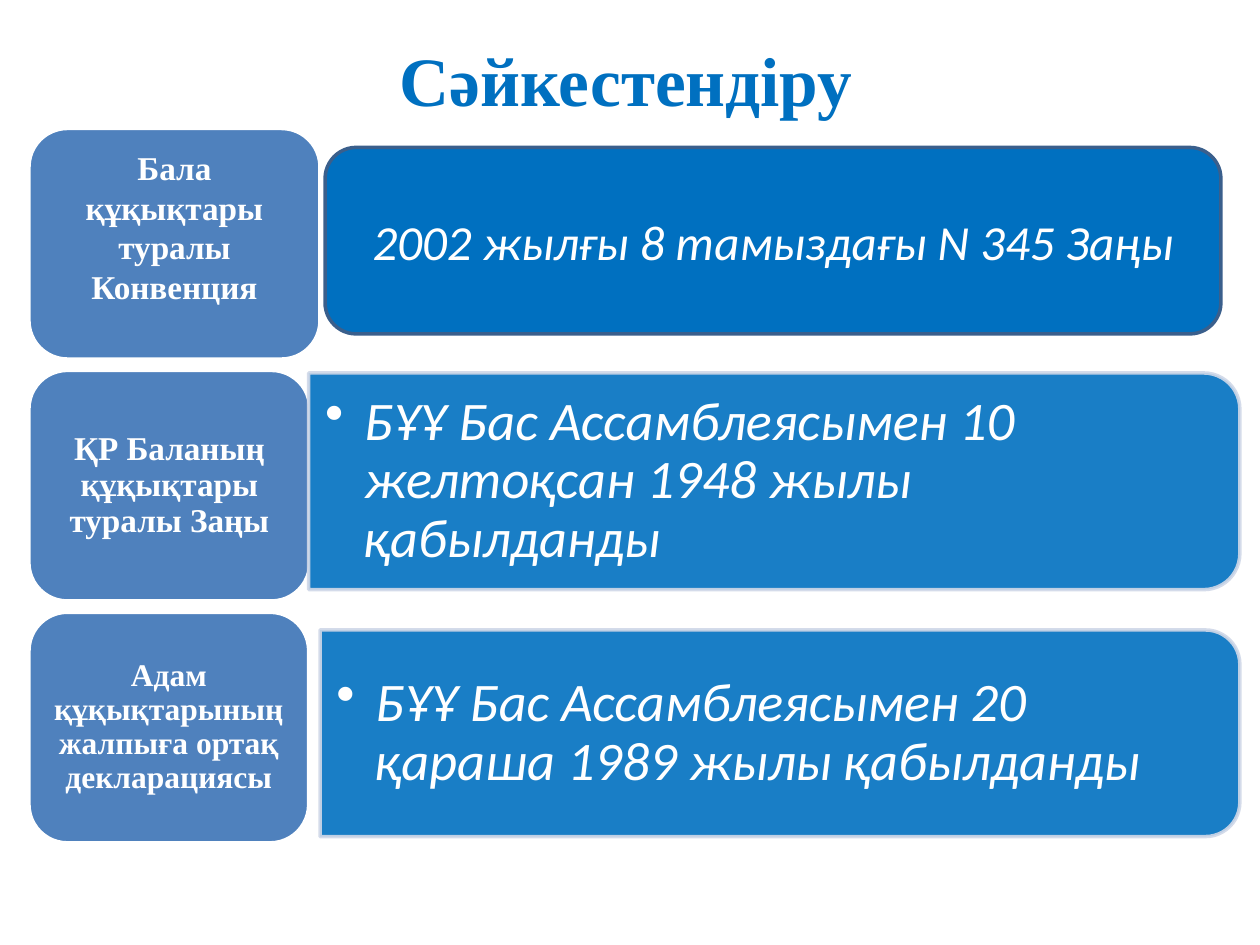
from lxml.etree import SubElement
from pptx import Presentation
from pptx.dml.color import RGBColor
from pptx.enum.shapes import MSO_SHAPE
from pptx.enum.text import MSO_ANCHOR, PP_ALIGN
from pptx.oxml.ns import qn
from pptx.util import Inches, Pt

TITLE = "Сәйкестендіру"
SERIF, SANS = "Times New Roman", "Calibri"
BLUE, STEEL, WHITE = "0070C0", "4F81BD", "FFFFFF"
LABEL_LEFT, LABEL_TOP, LABEL_HEIGHT, LABEL_PITCH = 0.23, 1.02, 1.83, 1.92
LABELS = [
    {"text": "Бала құқықтары туралы Конвенция", "width": 2.31, "size": 19,
     "spacing": 1.0, "bottom": 0.4},
    {"text": "ҚР Баланың құқықтары туралы Заңы", "width": 2.23, "size": 19,
     "spacing": 0.9, "bottom": 0.13},
    {"text": "Адам құқықтарының жалпыға ортақ декларациясы", "width": 2.22, "size": 18,
     "spacing": 0.9, "bottom": 0.13},
]
LAW = ("2002 жылғы 8 тамыздағы N 345 Заңы", (2.58, 1.17, 7.11, 1.48))
BARS = [
    ("БҰҰ Бас Ассамблеясымен 10 желтоқсан 1948 жылы қабылданды", (2.45, 2.96, 7.39, 1.72)),
    ("БҰҰ Бас Ассамблеясымен 20 қараша 1989 жылы қабылданды", (2.54, 5.0, 7.3, 1.64)),
]
BAR_TEXT_INSET = 0.08
BULLET_INDENT = 0.31


def color(value):
    """Turn a hex string into a colour."""
    return RGBColor.from_string(value)


def write(shape, text, font, insets, align=PP_ALIGN.CENTER, spacing=1.0):
    """Write one formatted paragraph into a shape and return it."""
    frame = shape.text_frame
    left, top, right, bottom = map(Inches, insets)
    frame_format = {"word_wrap": True, "vertical_anchor": MSO_ANCHOR.MIDDLE,
                    "margin_left": left, "margin_top": top,
                    "margin_right": right, "margin_bottom": bottom}
    for name, value in frame_format.items():
        setattr(frame, name, value)
    paragraph = frame.paragraphs[0]
    paragraph.alignment, paragraph.line_spacing = align, spacing
    run = paragraph.add_run()
    run.text = text
    for name, value in font.items():
        if name == "color":
            run.font.color.rgb = color(value)
        else:
            setattr(run.font, name, value)
    return paragraph


def add_panel(slide, kind, box, fill, line):
    """Add a filled preset shape with a two-point outline."""
    shape = slide.shapes.add_shape(kind, *map(Inches, box))
    shape.shadow.inherit = False
    shape.fill.solid()
    shape.fill.fore_color.rgb = color(fill)
    shape.line.color.rgb = color(line)
    shape.line.width = Pt(2)
    return shape


def add_bar(slide, text, box):
    """Add a translucent bar rounded on the right with its bulleted text."""
    left, top, width, height = box
    shift = (width - height) / 2
    bar = add_panel(slide, MSO_SHAPE.ROUND_2_SAME_RECTANGLE,
                    (left + shift, top - shift, height, width), BLUE, "D0D8E8")
    bar.rotation = 90
    for tone in bar.element.spPr.iter(qn("a:srgbClr")):
        SubElement(tone, qn("a:alpha"), val="90000")
    text_box = slide.shapes.add_textbox(
        *map(Inches, (left, top + BAR_TEXT_INSET, width - BAR_TEXT_INSET,
                      height - 2 * BAR_TEXT_INSET)))
    font = {"name": SANS, "size": Pt(31), "italic": True, "color": WHITE}
    paragraph = write(text_box, text, font, (0.13, 0.06, 0.13, 0.06), PP_ALIGN.LEFT, 0.9)
    properties = paragraph._p.get_or_add_pPr()
    properties.set("marL", str(Inches(BULLET_INDENT)))
    properties.set("indent", str(-Inches(BULLET_INDENT)))
    SubElement(properties, qn("a:buChar"), char="•")


def main():
    """Build the matching slide and save it."""
    presentation = Presentation()
    presentation.slide_width, presentation.slide_height = Inches(10), Inches(7.5)
    slide = presentation.slides.add_slide(presentation.slide_layouts[5])

    title = slide.shapes.title
    title.left, title.top, title.width, title.height = map(Inches, (0.47, 0.23, 9, 0.79))
    write(title, TITLE, {"name": SERIF, "size": Pt(39.6), "bold": True, "color": BLUE},
          (0.1, 0.05, 0.1, 0.05))

    for row, label in enumerate(LABELS):
        box = (LABEL_LEFT, LABEL_TOP + row * LABEL_PITCH, label["width"], LABEL_HEIGHT)
        shape = add_panel(slide, MSO_SHAPE.ROUNDED_RECTANGLE, box, STEEL, WHITE)
        font = {"name": SERIF, "size": Pt(label["size"]), "bold": True, "color": WHITE}
        write(shape, label["text"], font, (0.08, 0.04, 0.08, label["bottom"] - 0.09),
              spacing=label["spacing"])

    for text, box in BARS:
        add_bar(slide, text, box)

    text, box = LAW
    law = add_panel(slide, MSO_SHAPE.ROUNDED_RECTANGLE, box, BLUE, "3A5F8C")
    write(law, text, {"name": SANS, "size": Pt(28), "italic": True, "color": WHITE},
          (0.1, 0.05, 0.1, 0.05))
    presentation.save("out.pptx")


if __name__ == "__main__":
    main()
